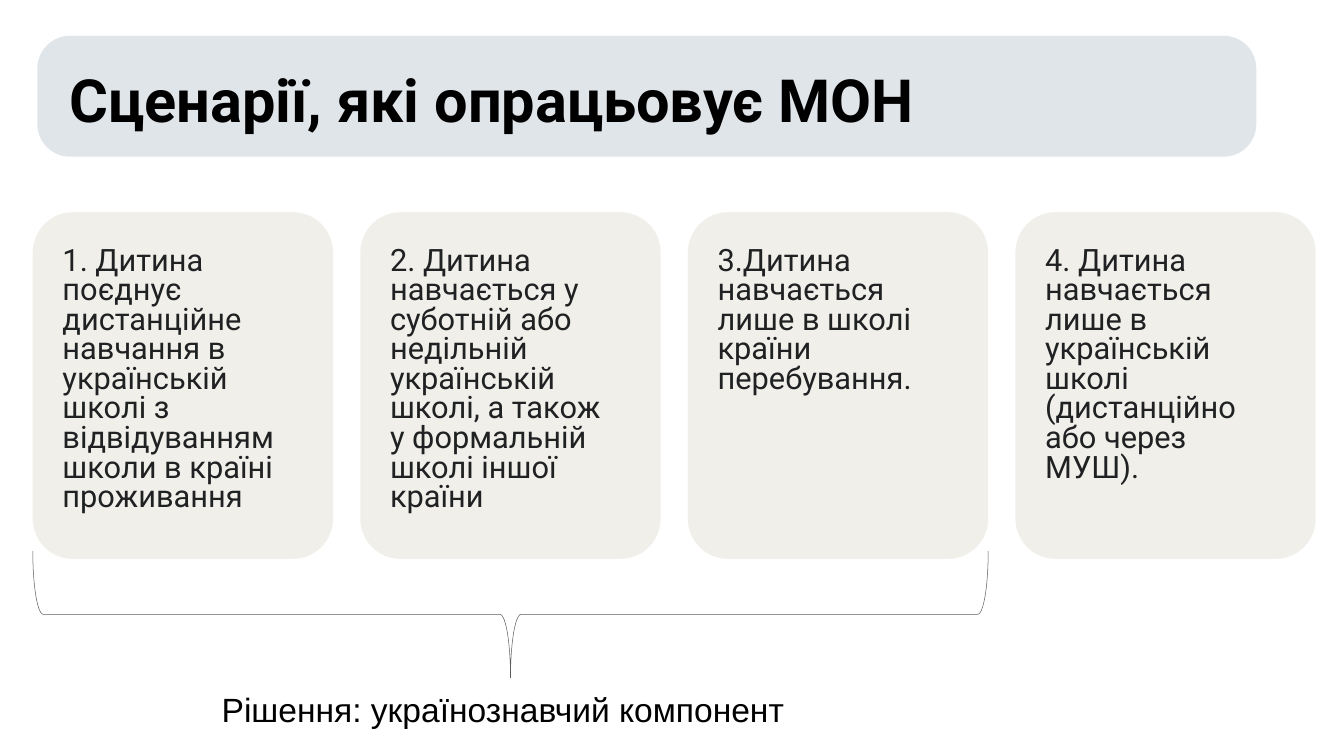
import pptx
import pptx.util
import pptx.dml.color
import pptx.enum.shapes
import pptx.enum.text

Inches = pptx.util.Inches
Pt = pptx.util.Pt
RGBColor = pptx.dml.color.RGBColor
Shape = pptx.enum.shapes.MSO_SHAPE

BANNER = RGBColor(0xE0, 0xE5, 0xEA)
CARD = RGBColor(0xF0, 0xEF, 0xEA)
INK = RGBColor(0x20, 0x21, 0x22)
BLACK = RGBColor(0, 0, 0)
BRACE = RGBColor(0x5E, 0x5E, 0x5E)

CARD_LEFT, CARD_TOP = 0.65, 4.21
CARD_WIDTH, CARD_HEIGHT = 5.96, 6.88
CARD_STEP = 6.5

SCENARIOS = [
    (["1. Дитина поєднує дистанційне навчання в українській \n"
      "школі з відвідуванням школи в країні проживання"], 8.13),
    (["2. Дитина навчається у суботній або недільній українській",
      "школі, а також у формальній школі іншої країни"], 5.65),
    (["3.Дитина навчається лише в школі країни перебування."], 2.96),
    (["4. Дитина навчається лише в українській школі",
      "(дистанційно або через МУШ)."], 2.96),
]


class SlideBuilder:
    font = "Roboto"
    inset = 0.06
    spacing = 0.8

    def __init__(self, slide):
        self.slide = slide

    def panel(self, left, top, width, height, radius, color):
        panel = self.slide.shapes.add_shape(
            Shape.ROUNDED_RECTANGLE, Inches(left), Inches(top), Inches(width), Inches(height))
        panel.adjustments[0] = radius
        panel.shadow.inherit = False
        panel.fill.solid()
        panel.fill.fore_color.rgb = color
        panel.line.fill.background()
        return panel

    def fill_text(self, box, paragraphs, size, color, bold=False, font=None, spacing=None, insets=None):
        frame = box.text_frame
        frame.word_wrap = True
        frame.auto_size = pptx.enum.text.MSO_AUTO_SIZE.NONE
        frame.vertical_anchor = pptx.enum.text.MSO_ANCHOR.TOP
        across, down = insets or (self.inset, self.inset)
        frame.margin_left = frame.margin_right = Inches(across)
        frame.margin_top = frame.margin_bottom = Inches(down)
        for index, text in enumerate(paragraphs):
            para = frame.add_paragraph() if index else frame.paragraphs[0]
            para.alignment = pptx.enum.text.PP_ALIGN.LEFT
            para.line_spacing = spacing or self.spacing
            para.space_before = para.space_after = Pt(0)
            for number, line in enumerate(text.split("\n")):
                if number:
                    para.add_line_break()
                span = para.add_run()
                span.text = line
                span.font.name = font or self.font
                span.font.size = Pt(size)
                span.font.bold = bold
                span.font.color.rgb = color

    def text(self, left, top, width, height, paragraphs, size, color, **style):
        box = self.slide.shapes.add_textbox(
            Inches(left), Inches(top), Inches(width), Inches(height))
        self.fill_text(box, paragraphs, size, color, **style)

    def title(self, text):
        banner = self.panel(0.74, 0.71, 24.19, 2.4, 0.271, BANNER)
        title = self.slide.shapes.title
        title.left, title.top = Inches(1.32), Inches(1.46)
        title.width, title.height = Inches(24.03), Inches(1.57)
        self.fill_text(title, [text], 85, BLACK, bold=True)
        banner.element.addnext(title.element)

    def card(self, left, paragraphs, text_height):
        self.panel(left, CARD_TOP, CARD_WIDTH, CARD_HEIGHT, 0.134, CARD)
        self.text(left + 0.53, CARD_TOP + 0.64, 4.54, text_height, paragraphs, 44, INK)

    def brace(self, left, top, width, height):
        brace = self.slide.shapes.add_shape(
            Shape.RIGHT_BRACE, Inches(left + (width - height) / 2),
            Inches(top + (height - width) / 2), Inches(height), Inches(width))
        brace.rotation = 90
        brace.adjustments[0] = 0.083
        brace.adjustments[1] = 0.5
        brace.shadow.inherit = False
        brace.fill.background()
        brace.line.color.rgb = BRACE
        brace.line.width = Pt(0.75)


def main():
    deck = pptx.Presentation()
    deck.slide_width = Inches(26.67)
    deck.slide_height = Inches(15)
    page = SlideBuilder(deck.slides.add_slide(deck.slide_layouts[5]))
    page.title("Сценарії, які опрацьовує МОН")
    for index, (paragraphs, text_height) in enumerate(SCENARIOS):
        page.card(CARD_LEFT + index * CARD_STEP, paragraphs, text_height)
    page.brace(CARD_LEFT, 10.93, 2 * CARD_STEP + CARD_WIDTH, 2.52)
    page.text(4.3, 13.62, 13.27, 0.91, ["Рішення: українознавчий компонент"], 48, BLACK,
              font="Arial", spacing=1.0, insets=(0.1, 0.05))
    deck.save("out.pptx")


if __name__ == "__main__":
    main()
